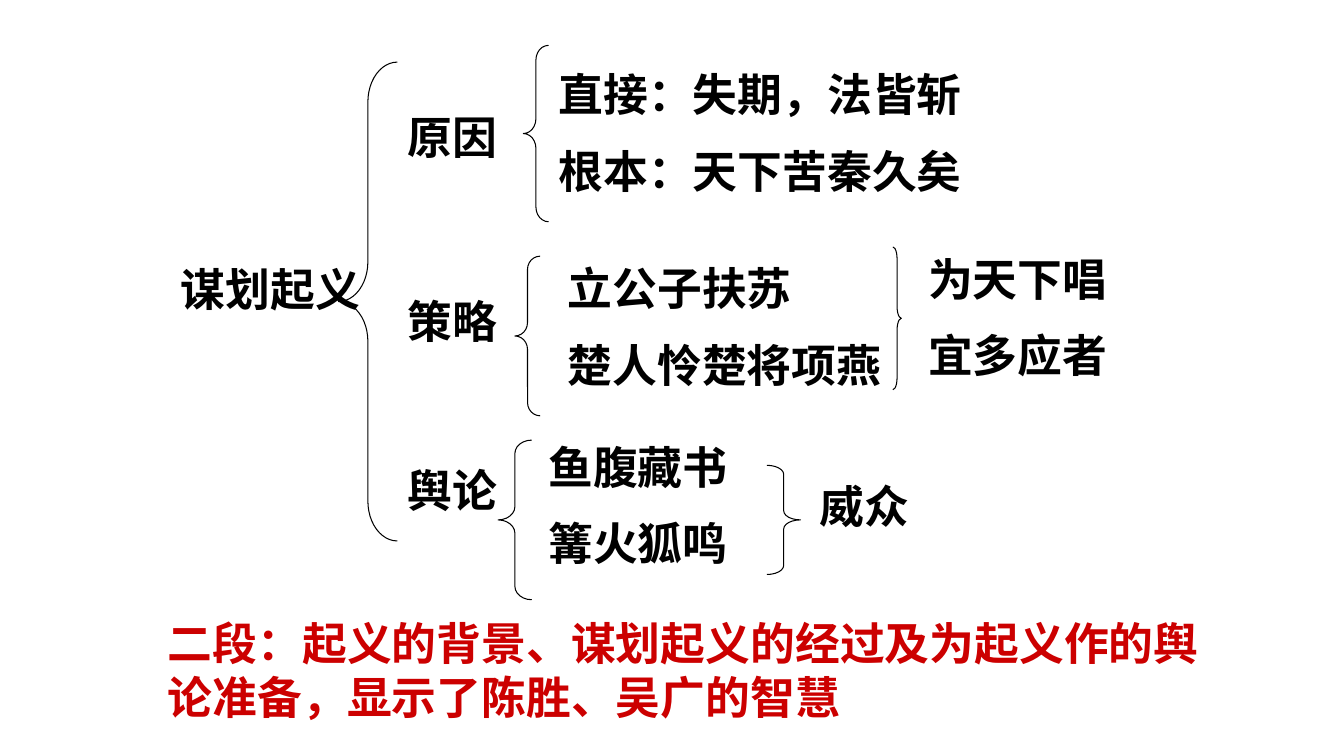
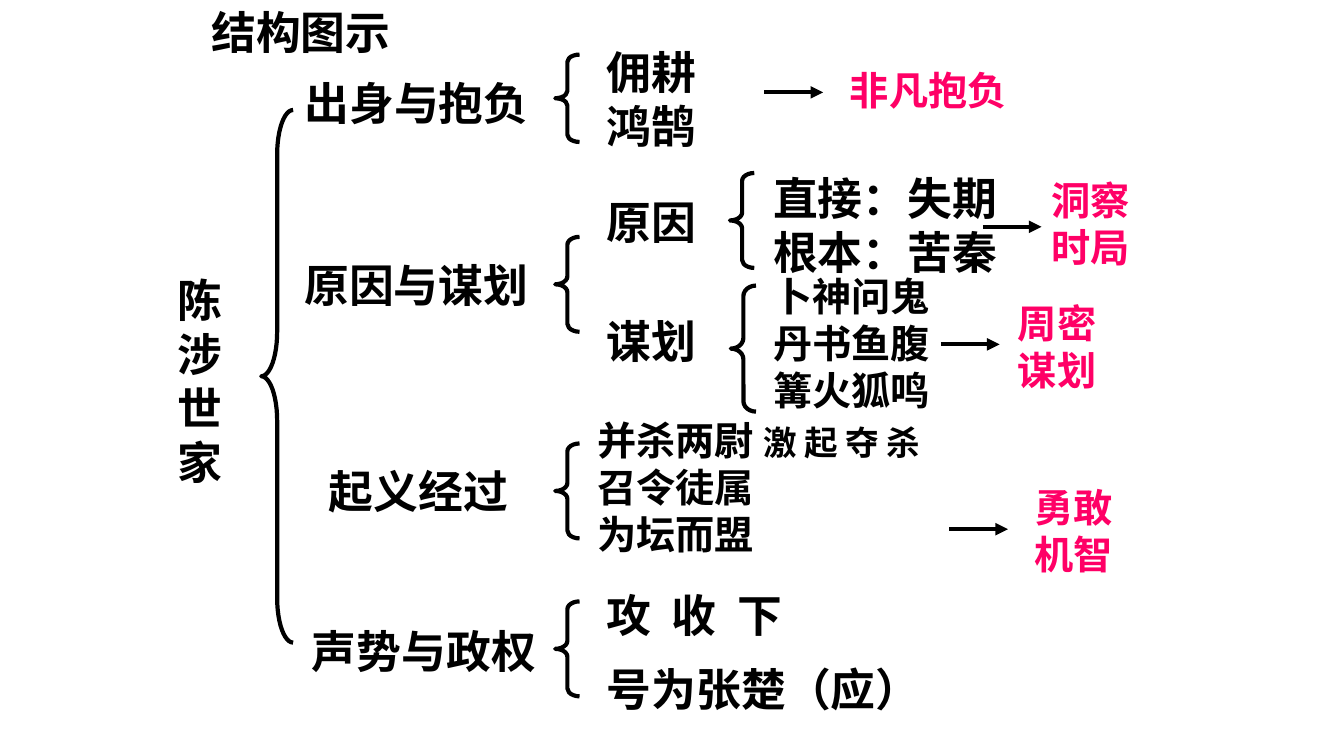
from pptx import Presentation
from pptx.dml.color import RGBColor
from pptx.enum.shapes import MSO_CONNECTOR, MSO_SHAPE
from pptx.enum.text import MSO_ANCHOR, MSO_AUTO_SIZE, PP_ALIGN
from pptx.oxml.ns import qn
from pptx.util import Inches, Pt
from lxml.etree import SubElement

COLUMNS, ROWS = 160, 90
CELL = Inches(1) / 12
BLACK, RED, PINK = "000000", "CC0000", "FF0066"
CHINESE = "Noto Sans CJK SC"
LINE_HEIGHT = 1.2
LEFT, RIGHT = MSO_SHAPE.LEFT_BRACE, MSO_SHAPE.RIGHT_BRACE

# Text styles of the two slides and of the pink conclusions
OUTLINE = dict(font="Times New Roman", gap=16)
DIAGRAM = dict(font="Noto Sans CJK JP", indent=0.33, anchor=MSO_ANCHOR.MIDDLE)
RESULT = dict(font="Arial", size=28, color=PINK, wrap=False)


def place_text(slide, column, row, columns, text, font, size=32, color=BLACK, gap=0,
               indent=0, anchor=MSO_ANCHOR.TOP, wrap=True, is_title=False):
    """Write bold lines at a grid cell; the height follows from the number of lines."""
    lines = text.split("\n")
    height = Pt(len(lines) * size * LINE_HEIGHT + (len(lines) - 1) * gap + 7.2)
    if is_title:
        shape = slide.shapes.title
        shape.left, shape.top = int(column * CELL), int(row * CELL)
        shape.width, shape.height = int(columns * CELL), height
    else:
        shape = slide.shapes.add_textbox(int(column * CELL), int(row * CELL),
                                         int(columns * CELL), height)
    frame = shape.text_frame
    frame.text = text
    frame.word_wrap = wrap
    frame.auto_size = MSO_AUTO_SIZE.NONE
    frame.vertical_anchor = anchor
    for number, paragraph in enumerate(frame.paragraphs):
        paragraph.alignment = PP_ALIGN.LEFT
        paragraph.line_spacing = Pt(size * LINE_HEIGHT)
        paragraph.space_before = Pt(gap if number else 0)
        if indent:
            paragraph._p.get_or_add_pPr().set("indent", str(Inches(indent)))
        for run in paragraph.runs:
            run.font.name, run.font.size, run.font.bold = font, Pt(size), True
            run.font.color.rgb = RGBColor.from_string(color)
            SubElement(run._r.get_or_add_rPr(), qn("a:ea"), typeface=CHINESE)
    return shape


def place_brace(slide, kind, column, row, columns, rows, weight):
    """Draw a brace whose curls are a twelfth of its height."""
    brace = slide.shapes.add_shape(kind, int(column * CELL), int(row * CELL),
                                   int(columns * CELL), int(rows * CELL))
    brace.adjustments[0] = rows / 12 / columns
    brace.shadow.inherit = False
    brace.fill.background()
    brace.line.color.rgb = RGBColor.from_string(BLACK)
    brace.line.width = Pt(weight)


presentation = Presentation()
presentation.slide_width = int(COLUMNS * CELL)
presentation.slide_height = int(ROWS * CELL)
title_only = presentation.slide_layouts[5]

# Slide 1: planning the uprising
slide = presentation.slides.add_slide(title_only)
place_text(slide, 20.3, 30.5, 40, "谋划起义", is_title=True, **OUTLINE)
for column, row, columns, text in [
    (47.3, 12.5, 27, "原因"),
    (65.3, 7.4, 65, "直接：失期，法皆斩\n根本：天下苦秦久矣"),
    (47.3, 34.4, 23, "策略"),
    (66.4, 30.5, 51, "立公子扶苏\n楚人怜楚将项燕"),
    (109.3, 29.4, 32, "为天下唱\n宜多应者"),
    (47.3, 54.5, 17, "舆论"),
    (64.1, 51.8, 42, "鱼腹藏书\n篝火狐鸣"),
    (96.4, 56.4, 25, "威众"),
]:
    place_text(slide, column, row, columns, text, **OUTLINE)
for kind, column, row, columns, rows in [
    (LEFT, 40.3, 7.4, 7, 57),
    (LEFT, 62.3, 5.4, 3, 21),
    (LEFT, 61.3, 30.5, 3, 19),
    (RIGHT, 106.3, 29.4, 1, 17),
    (LEFT, 59.3, 52.4, 4, 19),
    (RIGHT, 91.3, 55.4, 4, 13),
]:
    place_brace(slide, kind, column, row, columns, rows, 0.75)
summary = "二段：起义的背景、谋划起义的经过及为起义作的舆论准备，显示了陈胜、吴广的智慧"
place_text(slide, 18.8, 72.7, 129.2, summary, color=RED, **OUTLINE)

# Slide 2: structure of the whole text
slide = presentation.slides.add_slide(title_only)
place_text(slide, 20, 0, 31.2, "结构图示", is_title=True, **{**DIAGRAM, "font": CHINESE})
for column, row, columns, size, text in [
    (16, 31.9, 13.2, 32, "陈\n涉\n世\n家"),
    (31.1, 8.4, 37.8, 32, "出身与抱负"),
    (67.1, 4.7, 19, 32, "佣耕\n鸿鹄"),
    (31.1, 30.1, 33.1, 32, "原因与谋划"),
    (67.1, 22.6, 23.6, 32, "原因"),
    (86.9, 19.7, 44.4, 32, "直接：失期\n根本：苦秦"),
    (67.1, 36.7, 21.7, 32, "谋划"),
    (86.9, 31.8, 34.1, 28, "卜神问鬼\n丹书鱼腹\n篝火狐鸣"),
    (34, 54.6, 34.1, 32, "起义经过"),
    (32, 73.6, 41.6, 32, "声势与政权"),
    (67.1, 69.4, 34.9, 32, "攻  收  下"),
    (67.1, 78.2, 46.3, 32, "号为张楚（应）"),
]:
    place_text(slide, column, row, columns, text, size=size, **DIAGRAM)

events = place_text(slide, 66, 49, 52, "并杀两尉 \n召令徒属\n为坛而盟", size=28, **DIAGRAM)
remark = events.text_frame.paragraphs[0].add_run()
remark.text = "激 起 夺 杀"
remark.font.name, remark.font.size, remark.font.bold = DIAGRAM["font"], Pt(24), True
remark.font.color.rgb = RGBColor.from_string(BLACK)
SubElement(remark._r.get_or_add_rPr(), qn("a:ea"), typeface=CHINESE)

for column, row, columns, rows in [
    (31.1, 13.1, 3.8, 63.4),
    (66.1, 6.5, 2.9, 10.4),
    (86.9, 20.6, 2.9, 11.3),
    (87, 34, 3, 15),
    (66.1, 28.2, 2.9, 11.3),
    (66.1, 52.8, 2.9, 11.3),
    (66.1, 71.6, 2.9, 11.3),
]:
    place_brace(slide, LEFT, column, row, columns, rows, 3)

for column, row, columns, text, arrow_column, arrow_row in [
    (100, 7.3, 21.1, "非凡抱负", 91, 11),
    (124, 20.4, 11.8, "洞察\n时局", 117, 27),
    (120, 35, 11.8, "周密\n谋划", 112, 41),
    (122, 57, 11.8, "勇敢\n机智", 113, 63),
]:
    place_text(slide, column, row, columns, text, **RESULT)
    arrow = slide.shapes.add_connector(
        MSO_CONNECTOR.STRAIGHT, int(arrow_column * CELL), int(arrow_row * CELL),
        int((arrow_column + 7) * CELL), int(arrow_row * CELL))
    arrow.line.color.rgb = RGBColor.from_string(BLACK)
    arrow.line.width = Pt(3)
    SubElement(arrow.line._get_or_add_ln(), qn("a:tailEnd"), type="triangle")
    SubElement(arrow._element.spPr, qn("a:effectLst"))

presentation.save("out.pptx")
